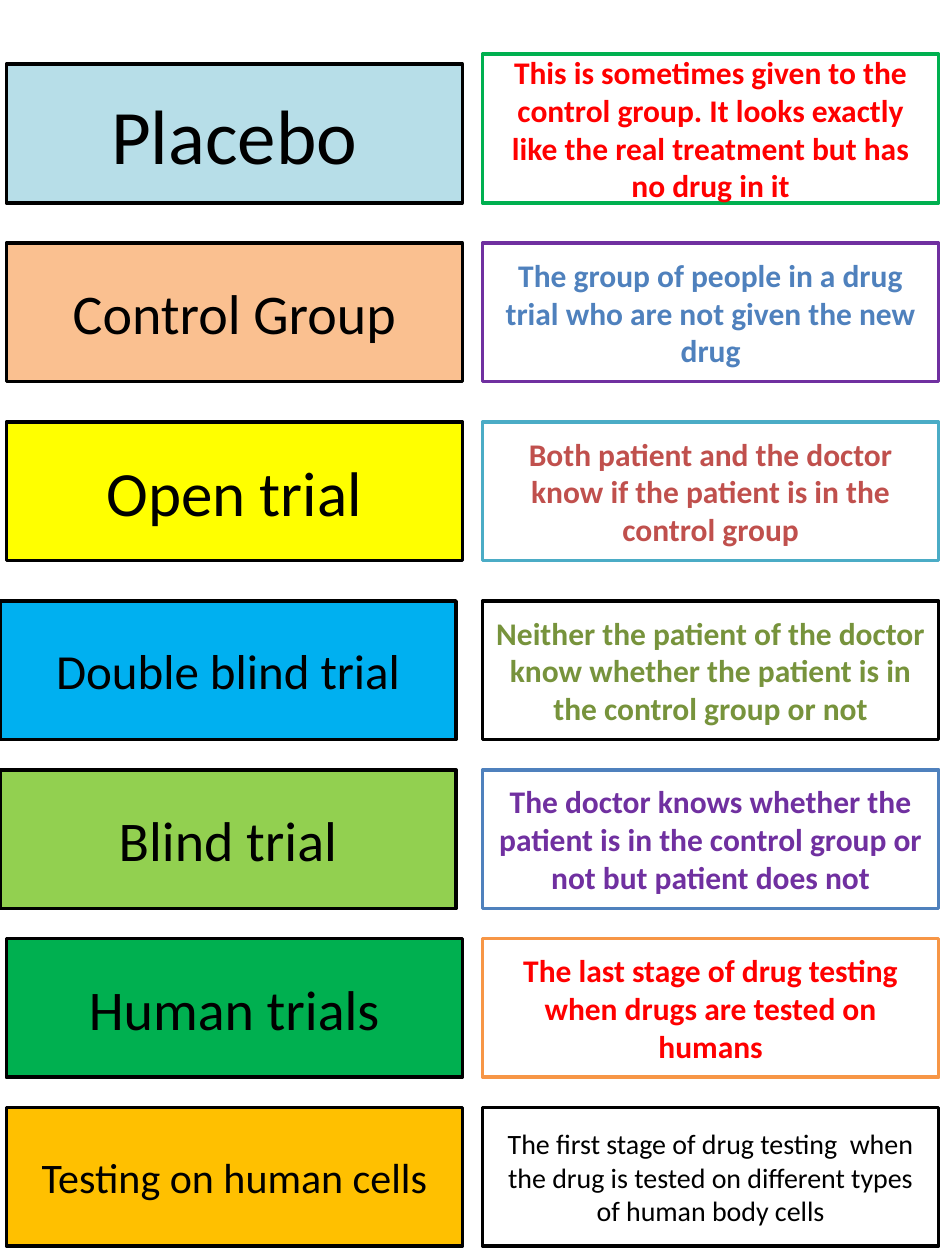
from pptx import Presentation
from pptx.dml.color import RGBColor
from pptx.enum.shapes import MSO_SHAPE as Kind
from pptx.enum.text import MSO_ANCHOR as Anchor, PP_ALIGN as Align
from pptx.util import Inches, Pt


def paint(color, code):
    color.rgb = RGBColor.from_string(code)


def add_card(left, top, high, fill, edge, words, size, ink, bold):
    card = slide.shapes.add_shape(
        Kind.RECTANGLE, Inches(left), Inches(top), Inches(3.62), Inches(high))
    card.shadow.inherit = False
    card.fill.solid()
    paint(card.fill.fore_color, fill)
    paint(card.line.color, edge)
    card.line.width = Pt(2)
    frame = card.text_frame
    frame.word_wrap = True
    frame.vertical_anchor = Anchor.MIDDLE
    frame.text = words
    para = frame.paragraphs[0]
    para.alignment = Align.CENTER
    font = para.runs[0].font
    font.name = "Calibri"
    font.size = Pt(size)
    font.bold = bold
    paint(font.color, ink)


deck = Presentation()
deck.slide_width, deck.slide_height = Inches(7.5), Inches(10)
slide = deck.slides.add_slide(deck.slide_layouts[6])

# Term, size, left, fill; then meaning, size, bold, edge, ink
rows = [
    ("Placebo", 44, 0.05, "B7DEE8",
     "This is sometimes given to the control group. It looks exactly like "
     "the real treatment but has no drug in it", 18, True, "00B050", "FF0000"),
    ("Control Group", 32, 0.05, "FAC090",
     "The group of people in a drug trial who are not given the new drug",
     18, True, "7030A0", "4F81BD"),
    ("Open trial", 36, 0.05, "FFFF00",
     "Both patient and the doctor know if the patient is in the control group",
     18, True, "4BACC6", "C0504D"),
    ("Double blind trial", 28, 0, "00B0F0",
     "Neither the patient of the doctor know whether the patient is in the "
     "control group or not", 18, True, "000000", "77933C"),
    ("Blind trial", 32, 0, "92D050",
     "The doctor knows whether the patient is in the control group or not "
     "but patient does not", 18, True, "4F81BD", "7030A0"),
    ("Human trials", 32, 0.05, "00B050",
     "The last stage of drug testing when drugs are tested on humans",
     18, True, "F79646", "FF0000"),
    ("Testing on human cells", 24, 0.05, "FFC000",
     "The first stage of drug testing  when the drug is tested on different "
     "types of human body cells", 16, False, "000000", "000000"),
]

# Matching cards: the rows sit closer together after the fourth
top = 0.51
for i, (term, big, left, fill, note, size, bold, edge, ink) in enumerate(rows):
    add_card(left, top, 1.1, fill, "000000", term, big, "000000", False)
    rise = 0.08 if i == 0 else 0  # the longest meaning needs a taller card
    add_card(3.83, top - rise, 1.1 + rise, "FFFFFF", edge, note, size, ink, bold)
    top += 1.42 if i < 3 else 1.34

deck.save("out.pptx")
